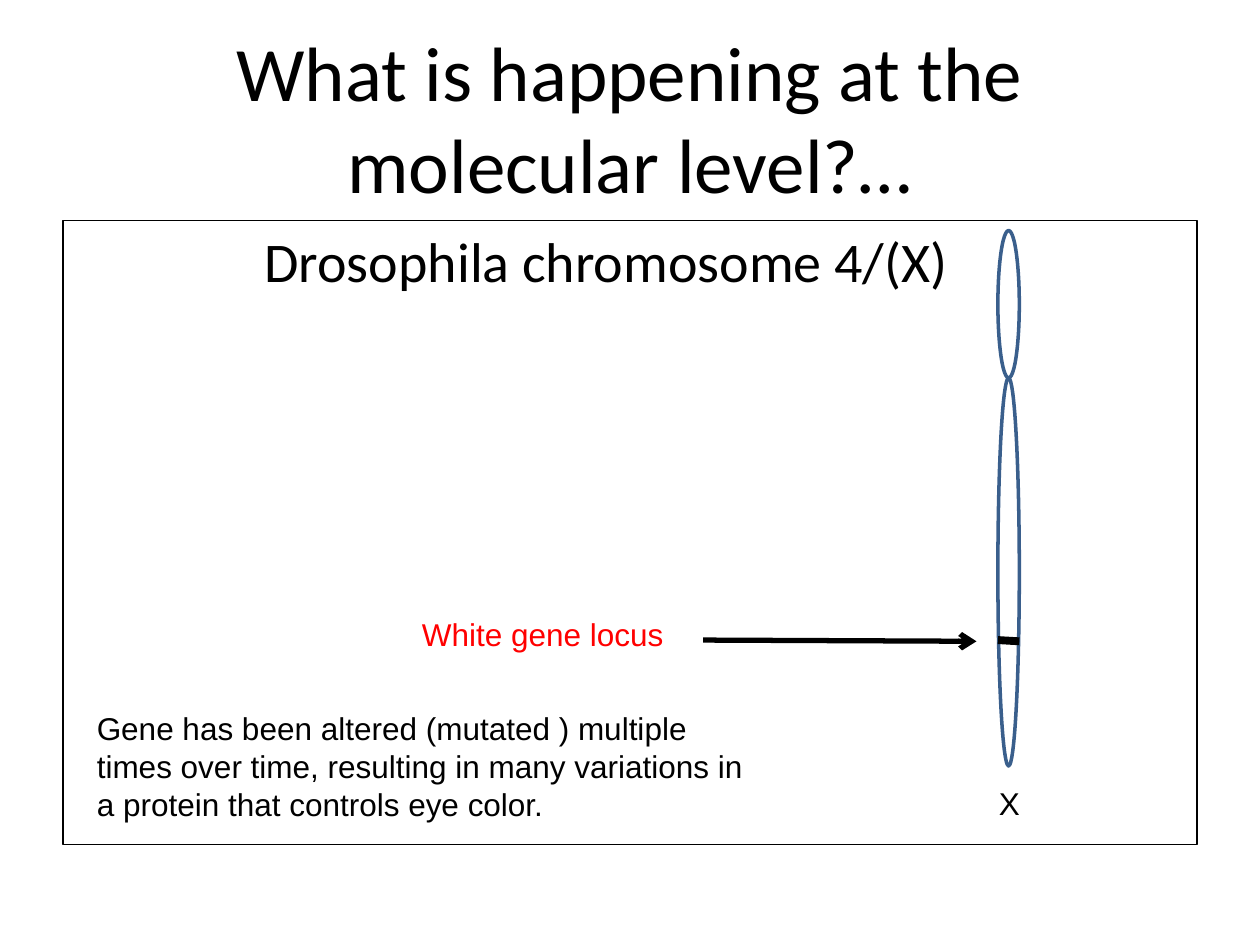
from lxml import etree
from pptx import Presentation
from pptx.dml.color import RGBColor
from pptx.enum.shapes import MSO_CONNECTOR, MSO_SHAPE
from pptx.enum.text import MSO_ANCHOR, PP_ALIGN
from pptx.oxml.ns import qn
from pptx.util import Inches, Pt

RECT, OVAL = MSO_SHAPE.RECTANGLE, MSO_SHAPE.OVAL
LINE = MSO_CONNECTOR.STRAIGHT
TOP, MIDDLE = MSO_ANCHOR.TOP, MSO_ANCHOR.MIDDLE
LEFT, CENTER = PP_ALIGN.LEFT, PP_ALIGN.CENTER

BLACK = RGBColor(0, 0, 0)
WHITE = RGBColor(255, 255, 255)
RED = RGBColor(255, 0, 0)
BLUE = RGBColor(0x3A, 0x5F, 0x8C)

WIDE, HIGH = 10, 7.5
EDGE = WIDE / 20
SPAN = WIDE - 2 * EDGE

TITLE = "What is happening at the molecular level?…"
HEAD = "Drosophila chromosome 4/(X)"
LABELS = [
    ("White gene locus", (3.25, 4.83, 2.33, 0.4), RED),
    ("Gene has been altered (mutated ) multiple times over time, resulting "
     "in many variations in a protein that controls eye color.",
     (0.67, 5.58, 5.5, 1.01), BLACK),
    ("X", (7.83, 6.17, 0.75, 0.4), BLACK),
]
ARM_LEFT, ARM_WIDE, ARM_TOP = 7.92, 0.17, 1.83
ARMS = [1.17, 3.08]
LOCUS = 5.08
DROP = 0.01


def put_text(shape, text, size, font, color, align=LEFT, anchor=TOP):
    frame = shape.text_frame
    frame.word_wrap = True
    frame.vertical_anchor = anchor
    para = frame.paragraphs[0]
    para.alignment = align
    run = para.add_run()
    run.text = text
    run.font.size = Pt(size)
    run.font.name = font
    run.font.color.rgb = color
    return para


def add_text(box, *style):
    return put_text(slide.shapes.add_textbox(*map(Inches, box)), *style)


def add_form(shapes, kind, box, color, width):
    """Add a white outlined shape without a shadow."""
    form = shapes.add_shape(kind, *map(Inches, box))
    form.shadow.inherit = False
    form.fill.solid()
    form.fill.fore_color.rgb = WHITE
    form.line.color.rgb = color
    form.line.width = Pt(width)
    return form


def add_line(shapes, start, end, width):
    ends = (start, LOCUS, end, LOCUS + DROP)
    line = shapes.add_connector(LINE, *map(Inches, ends))
    line.line.color.rgb = BLACK
    line.line.width = Pt(width)
    etree.SubElement(line._element.spPr, qn("a:effectLst"))
    return line


deck = Presentation()
deck.slide_width, deck.slide_height = Inches(WIDE), Inches(HIGH)
slide = deck.slides.add_slide(deck.slide_layouts[6])

add_text((EDGE, 0.3, SPAN, 1.25), TITLE, 44, "Calibri", BLACK, CENTER, MIDDLE)

panel = add_form(slide.shapes, RECT, (EDGE, 1.75, SPAN, 4.95), BLACK, 0.75)
head = put_text(panel, HEAD, 32, "Calibri", BLACK)
props = head._p.get_or_add_pPr()
props.set("marL", str(Inches(1.75)))
props.set("indent", str(Inches(-0.25)))

group = slide.shapes.add_group_shape()
top = ARM_TOP
for tall in ARMS:
    add_form(group.shapes, OVAL, (ARM_LEFT, top, ARM_WIDE, tall), BLUE, 2)
    top += tall
add_line(group.shapes, ARM_LEFT, ARM_LEFT + ARM_WIDE, 4.5)

arrow = add_line(slide.shapes, 5.58, 7.75, 3)
etree.SubElement(arrow.line._get_or_add_ln(), qn("a:tailEnd"), type="arrow")

for text, box, color in LABELS:
    add_text(box, text, 18, "Arial", color)

deck.save("out.pptx")
